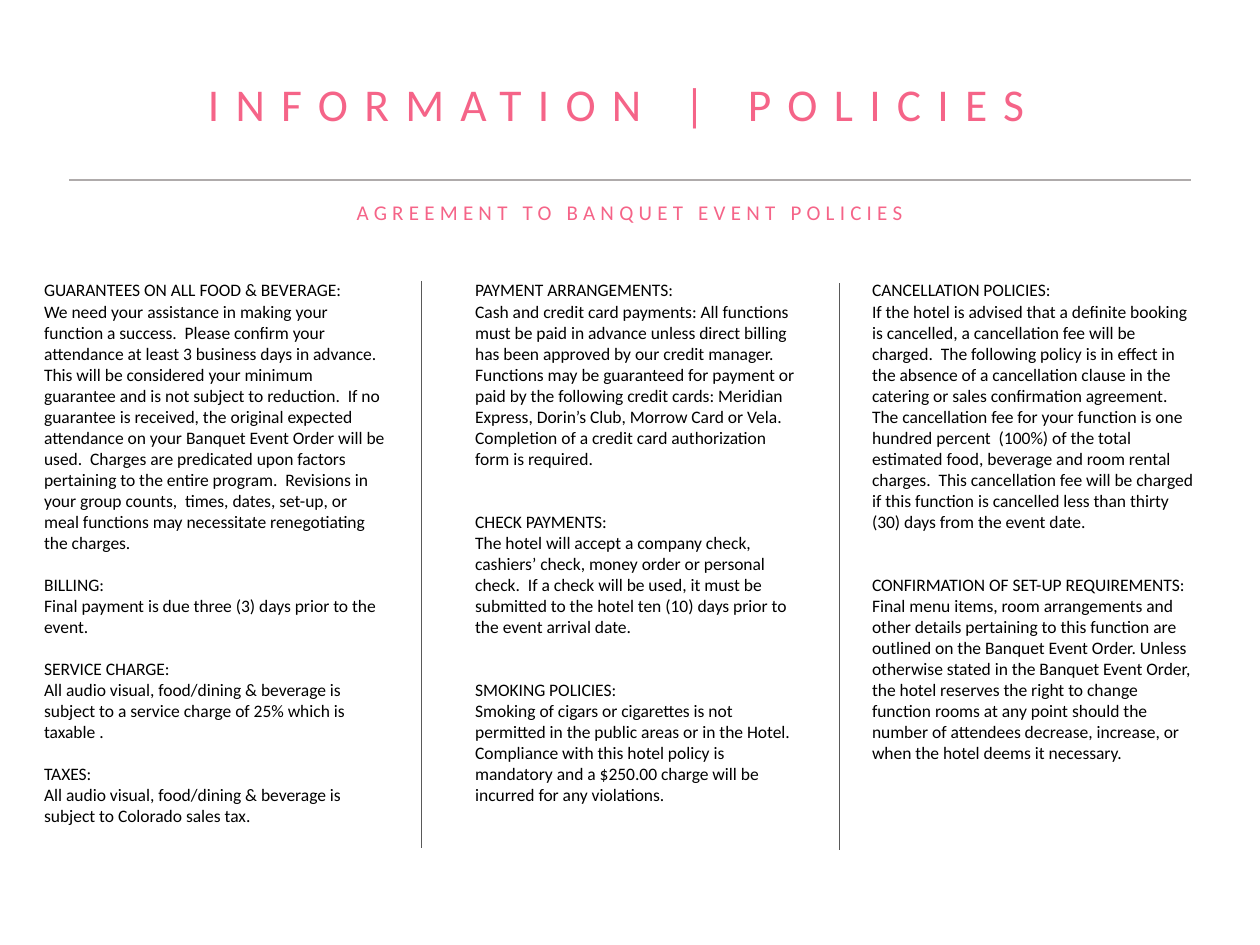
from lxml.etree import SubElement
from pptx import Presentation
from pptx.dml.color import RGBColor as Rgb
from pptx.enum.shapes import MSO_CONNECTOR as Link
from pptx.enum.text import MSO_AUTO_SIZE as Fit, PP_ALIGN as Align
from pptx.oxml.ns import qn
from pptx.util import Cm, Pt

PINK = Rgb(0xF5, 0x64, 0x88)
BLACK = Rgb(0, 0, 0)
SILVER = Rgb(0xAF, 0xAB, 0xAB)
GREY = Rgb(0x59, 0x59, 0x59)
FONT = "Calibri"
WIDE, HIGH = 25.4, 19.05

LEFT = [
    ("GUARANTEES ON ALL FOOD & BEVERAGE:",
     "We need your assistance in making your function a success.  Please confirm your "
     "attendance at least 3 business days in advance.  This will be considered your "
     "minimum guarantee and is not subject to reduction.  If no guarantee is received, "
     "the original expected attendance on your Banquet Event Order will be used.  "
     "Charges are predicated upon factors pertaining to the entire program.  Revisions "
     "in your group counts,  times, dates, set-up, or meal functions may necessitate "
     "renegotiating the charges."),
    ("BILLING:", "Final payment is due three (3) days prior to the event."),
    ("SERVICE CHARGE:",
     "All audio visual, food/dining & beverage is subject to a service charge of 25% "
     "which is taxable ."),
    ("TAXES:",
     "All audio visual, food/dining & beverage is subject to Colorado sales tax."),
]
MIDDLE = [
    ("PAYMENT ARRANGEMENTS:",
     "Cash and credit card payments: All functions must be paid in advance unless "
     "direct billing has been approved by our credit manager.  Functions may be "
     "guaranteed for payment or paid by the following credit cards: Meridian Express, "
     "Dorin’s Club, Morrow Card or Vela.  Completion of a credit card authorization "
     "form is required."),
    ("CHECK PAYMENTS:",
     "The hotel will accept a company check, cashiers’ check, money order or personal "
     "check.  If a check will be used, it must be submitted to the hotel ten (10) days "
     "prior to the event arrival date."),
    ("SMOKING POLICIES:",
     "Smoking of cigars or cigarettes is not permitted in the public areas or in the "
     "Hotel. Compliance with this hotel policy is mandatory and a $250.00 charge will "
     "be incurred for any violations."),
]
RIGHT = [
    ("CANCELLATION POLICIES:",
     "If the hotel is advised that a definite booking is cancelled, a cancellation fee "
     "will be charged.  The following policy is in effect in the absence of a "
     "cancellation clause in the catering or sales confirmation agreement.  The "
     "cancellation fee for your function is one hundred percent  (100%) of the total "
     "estimated food, beverage and room rental charges.  This cancellation fee will be "
     "charged if this function is cancelled less than thirty (30) days from the event "
     "date."),
    ("CONFIRMATION OF SET-UP REQUIREMENTS:",
     "Final menu items, room arrangements and other details pertaining to this function "
     "are outlined on the Banquet Event Order. Unless otherwise stated in the Banquet "
     "Event Order, the hotel reserves the right to change function rooms at any point "
     "should the number of attendees decrease, increase, or when the hotel deems it "
     "necessary."),
]


def add_text(slide, box, lines, size=10, color=BLACK, align=Align.LEFT, track=0):
    """Lines are (text, points before) pairs; track is letter spacing in points."""
    shape = slide.shapes.add_textbox(*map(Cm, box))
    frame = shape.text_frame
    frame.word_wrap = True
    frame.auto_size = Fit.SHAPE_TO_FIT_TEXT
    for i, (text, gap) in enumerate(lines):
        para = frame.add_paragraph() if i else frame.paragraphs[0]
        para.alignment = align
        para.space_before = Pt(gap)
        run = para.add_run()
        run.text = text
        run.font.name = FONT
        run.font.size = Pt(size)
        run.font.color.rgb = color
        if track:
            run.font._element.set("spc", str(round(track * 100)))


def add_rule(slide, start, end, color, width):
    line = slide.shapes.add_connector(Link.STRAIGHT, *map(Cm, start + end))
    line.line.color.rgb = color
    line.line.width = Pt(width)
    SubElement(line._element.spPr, qn("a:effectLst"))


def add_header(slide, box):
    left, top, width, height = box
    style = {"color": PINK, "align": Align.CENTER}
    add_text(slide, (left, top, width, 1.4), [("INFORMATION | POLICIES ", 0)],
             size=26, track=9.3, **style)
    rule = top + 2.23
    add_rule(slide, (left + 1.4, rule), (left + width - 1.4, rule), SILVER, 1)
    add_text(slide, (left, top + height - 0.76, width, 0.76),
             [("AGREEMENT TO BANQUET EVENT POLICIES", 0)], size=12, track=3, **style)


def add_column(slide, box, parts, gap):
    """Stack headed paragraphs, with gap points above each later heading."""
    lines = []
    for i, (head, body) in enumerate(parts):
        lines += [(head, gap if i else 0), (body, 0)]
    add_text(slide, box, lines)


def add_body(slide, box):
    left, top, _, height = box
    columns = [(0, 7.39, LEFT, 12), (8.69, 6.99, MIDDLE, 24), (16.69, 6.99, RIGHT, 24)]
    for x, width, parts, gap in columns:
        add_column(slide, (left + x, top, width, height), parts, gap)
    for x, y in [(7.85, 0.15), (16.28, 0.2)]:
        start = top + y
        add_rule(slide, (left + x, start), (left + x, start + 11.43), GREY, 0.5)


def main():
    deck = Presentation()
    deck.slide_width, deck.slide_height = Cm(WIDE), Cm(HIGH)
    slide = deck.slides.add_slide(deck.slide_layouts[6])
    add_header(slide, (0, 1.4, WIDE, 3.25))
    add_body(slide, (0.64, 5.51, 23.68, 12.65))
    deck.save("out.pptx")


if __name__ == "__main__":
    main()
